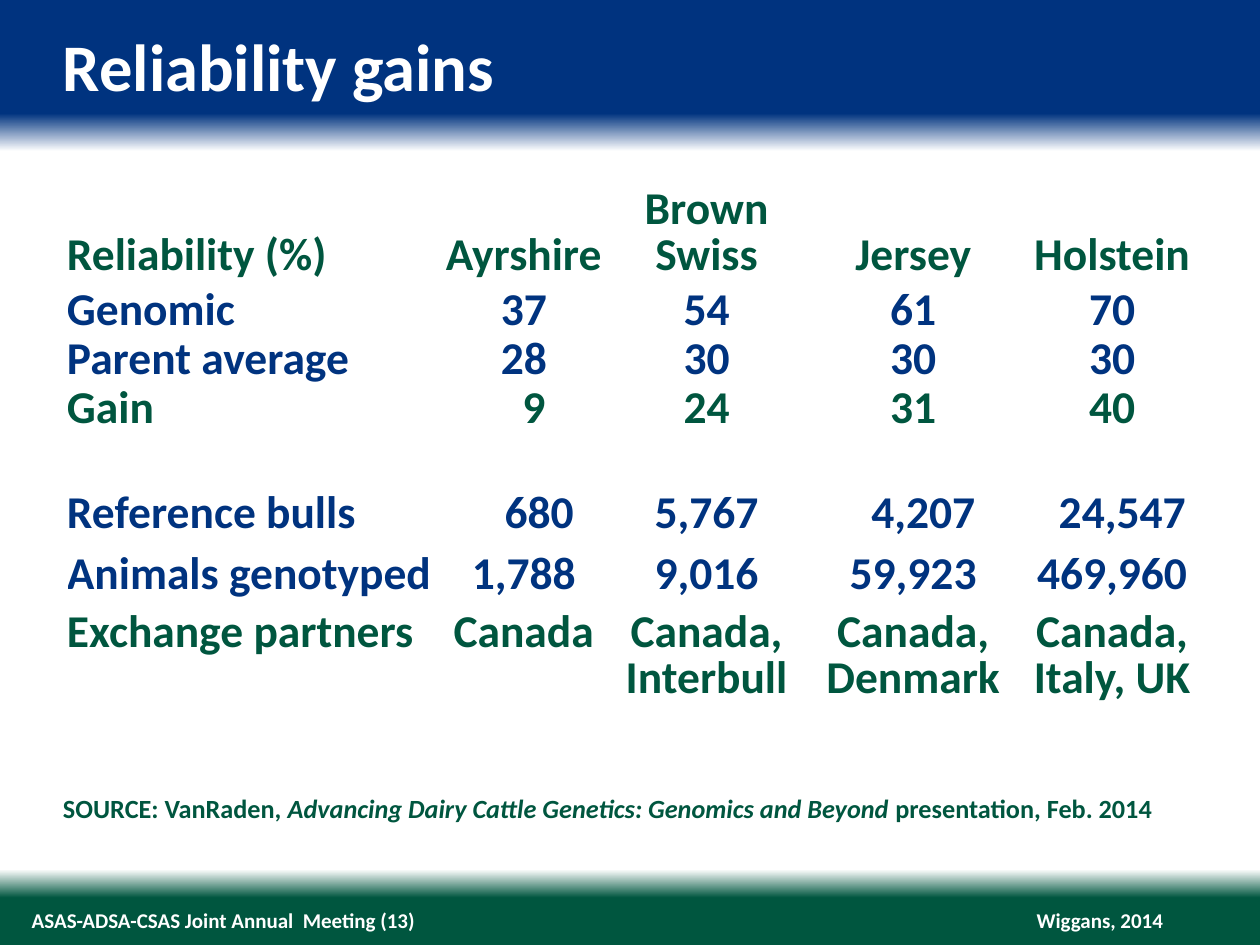
from lxml.etree import SubElement
from pptx import Presentation
from pptx.dml.color import RGBColor
from pptx.enum.text import MSO_ANCHOR, PP_ALIGN
from pptx.oxml.ns import qn
from pptx.util import Cm, Pt

BLUE = RGBColor(0x00, 0x33, 0x7F)
GREEN = RGBColor(0x00, 0x56, 0x3F)
WHITE = RGBColor(0xFF, 0xFF, 0xFF)
FONT = "Calibri"

BACKGROUND_STOPS = [(0, BLUE), (12, BLUE), (16, WHITE), (92, WHITE), (95, GREEN), (100, GREEN)]

TEXT_BOXES = [
    {"at": (20.85, 18.29, 2.6, 0.51), "size": 12, "color": WHITE, "align": PP_ALIGN.RIGHT,
     "anchor": MSO_ANCHOR.MIDDLE, "wrap": False, "runs": [("Wiggans, 2014", False)]},
    {"at": (0.64, 18.29, 13.26, 0.51), "size": 12, "color": WHITE, "align": PP_ALIGN.LEFT,
     "anchor": MSO_ANCHOR.MIDDLE, "wrap": True,
     "runs": [("ASAS-ADSA-CSAS Joint Annual  Meeting (13)", False)]},
    {"at": (1.27, 0.51, 22.86, 1.63), "size": 38, "color": WHITE, "align": PP_ALIGN.LEFT,
     "anchor": MSO_ANCHOR.TOP, "wrap": True, "runs": [("Reliability gains", False)]},
    {"at": (1.27, 15.98, 22.86, 0.64), "size": 15, "color": GREEN, "align": PP_ALIGN.LEFT,
     "anchor": MSO_ANCHOR.TOP, "wrap": True,
     "runs": [("SOURCE: VanRaden, ", False),
              ("Advancing Dairy Cattle Genetics: Genomics and Beyond ", True),
              ("presentation, Feb. 2014", False)]},
]

TABLE_LEFT, TABLE_TOP = 1.35, 3.86
COLUMN_WIDTHS = [7.47, 3.48, 3.89, 4.44, 3.58]

# values, colour, line spacing, row height, top margin, bottom margin
ROWS = [
    (["Reliability (%)", "Ayrshire", "Brown Swiss", "Jersey", "Holstein"], GREEN, 26, 1.96, 0, 0.13),
    (["Genomic", "37", "54", "61", "70"], BLUE, 28, 0.99, 0, 0),
    (["Parent average", "28", "30", "30", "30"], BLUE, 28, 0.99, 0, 0),
    (["Gain", "9", "24", "31", "40"], GREEN, 28, 0.99, 0, 0),
    ([""] * 5, BLUE, 12, 1.11, 0, 0),
    (["Reference bulls", "680", "5,767", "4,207", "24,547"], BLUE, 28, 0.99, 0, 0),
    (["Animals genotyped", "1,788", "9,016", "59,923", "469,960"], BLUE, 28, 1.24, 0.25, 0),
    (["Exchange partners", "Canada", "Canada, Interbull", "Canada, Denmark", "Canada, Italy, UK"],
     GREEN, 26, 2.09, 0.25, 0),
]
DIGIT_INDENTS = {"9": 0.41, "680": 0.62, "4,207": 0.41, "24,547": 0.41}


def add_run(paragraph, text, size, color, italic=False):
    run = paragraph.add_run()
    run.text = text
    run.font.name = FONT
    run.font.size = Pt(size)
    run.font.bold = True
    run.font.italic = italic
    run.font.color.rgb = color


def set_background(slide):
    fill = slide.background.fill
    fill.gradient()
    fill.gradient_angle = 270
    stop_list = slide.element.find(".//" + qn("a:gsLst"))
    for stop in list(stop_list):
        stop_list.remove(stop)
    for percent, color in BACKGROUND_STOPS:
        stop = SubElement(stop_list, qn("a:gs"), pos=str(percent * 1000))
        SubElement(stop, qn("a:srgbClr"), val=str(color))


def add_text_box(slide, box):
    frame = slide.shapes.add_textbox(*map(Cm, box["at"])).text_frame
    frame.margin_left = frame.margin_right = frame.margin_top = frame.margin_bottom = 0
    frame.word_wrap = box["wrap"]
    frame.vertical_anchor = box["anchor"]
    paragraph = frame.paragraphs[0]
    paragraph.alignment = box["align"]
    for text, italic in box["runs"]:
        add_run(paragraph, text, box["size"], box["color"], italic)


def add_reliability_table(slide):
    heights = [row[3] for row in ROWS]
    table = slide.shapes.add_table(
        len(ROWS), len(COLUMN_WIDTHS), Cm(TABLE_LEFT), Cm(TABLE_TOP),
        Cm(sum(COLUMN_WIDTHS)), Cm(sum(heights))).table
    table.first_row = table.horz_banding = False
    for column, width in zip(table.columns, COLUMN_WIDTHS):
        column.width = Cm(width)
    for row_index, (values, color, spacing, height, top, bottom) in enumerate(ROWS):
        table.rows[row_index].height = Cm(height)
        for column_index, value in enumerate(values):
            cell = table.cell(row_index, column_index)
            cell.fill.background()
            cell.margin_left = Cm(DIGIT_INDENTS.get(value, 0))
            cell.margin_right = 0
            cell.margin_top, cell.margin_bottom = Cm(top), Cm(bottom)
            cell.vertical_anchor = MSO_ANCHOR.BOTTOM if row_index == 0 else MSO_ANCHOR.TOP
            paragraph = cell.text_frame.paragraphs[0]
            paragraph.alignment = PP_ALIGN.CENTER if column_index else PP_ALIGN.LEFT
            paragraph.line_spacing = Pt(spacing)
            if value:
                add_run(paragraph, value, 26, color)


def main():
    presentation = Presentation()
    presentation.slide_width, presentation.slide_height = Cm(25.4), Cm(19.05)
    slide = presentation.slides.add_slide(presentation.slide_layouts[6])
    set_background(slide)
    for box in TEXT_BOXES:
        add_text_box(slide, box)
    add_reliability_table(slide)
    presentation.save("out.pptx")


if __name__ == "__main__":
    main()
